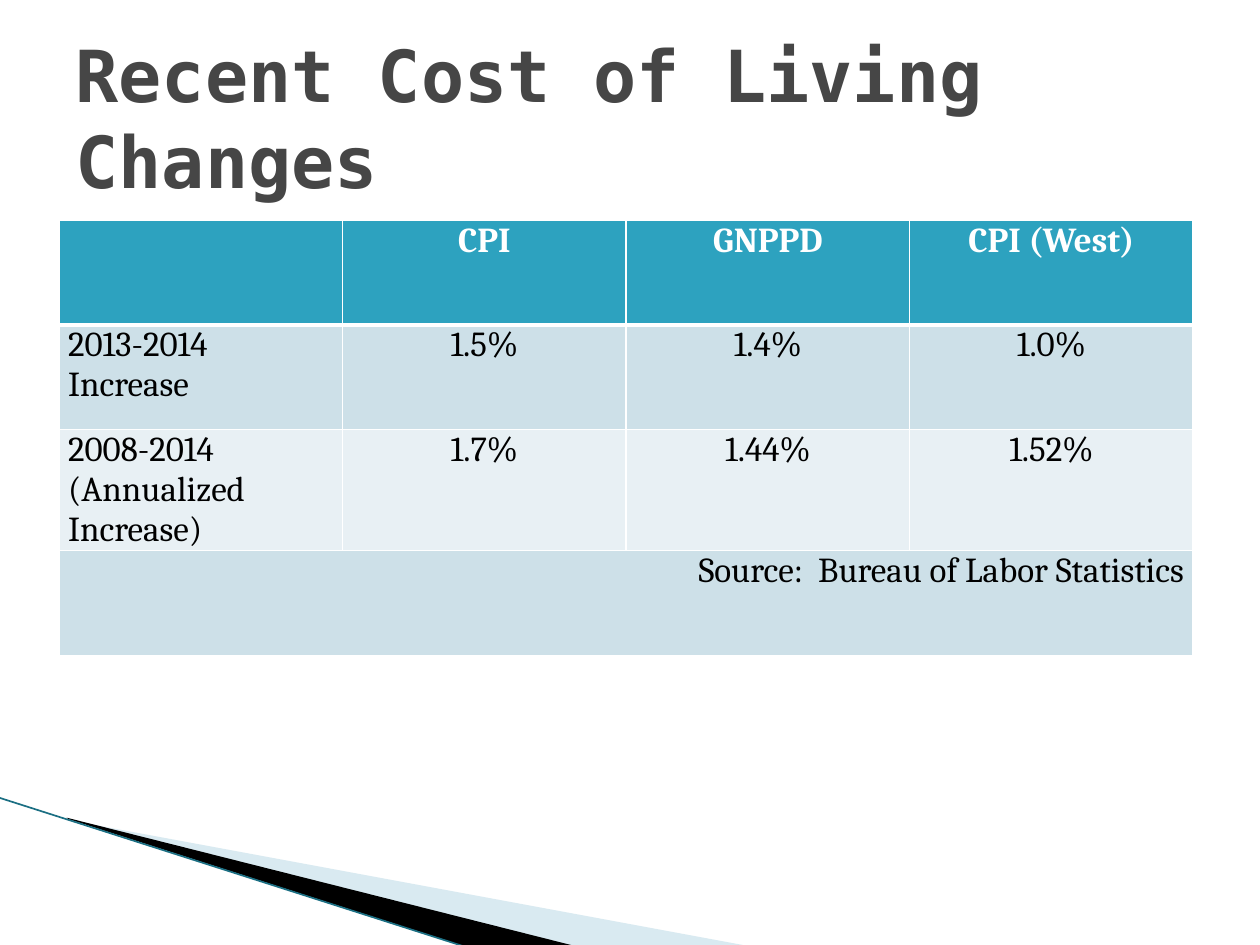
from dataclasses import dataclass

from lxml.etree import SubElement
from pptx import Presentation
from pptx.dml.color import RGBColor
from pptx.enum.shapes import MSO_CONNECTOR
from pptx.enum.text import MSO_ANCHOR, MSO_AUTO_SIZE, PP_ALIGN
from pptx.oxml.ns import qn
from pptx.util import Inches, Pt


@dataclass(frozen=True)
class Theme:
    title_font: str = "DejaVu Sans Mono"
    table_font: str = "Cambria"
    title_size: float = 41
    table_size: float = 20
    title: str = "464646"
    text: str = "000000"
    white: str = "FFFFFF"
    header: str = "2DA2BF"
    band_dark: str = "CDE0E8"
    band_light: str = "E8F0F4"
    wedge_pale: str = "A0CBDC"
    wedge_dark: str = "000000"
    edge: str = "1B6F83"


@dataclass(frozen=True)
class Wedge:
    points: tuple[tuple[float, float], ...]
    color: str
    opacity: int = 100


@dataclass(frozen=True)
class TableRow:
    texts: tuple[str, ...]
    fill: str
    color: str = Theme.text
    bold: bool = False
    bottom_border: float = 1


THEME = Theme()
WEDGES = (
    Wedge(((0.55, 6.51), (5.95, 7.51), (4.56, 7.51), (0.55, 6.5)), THEME.wedge_pale, 40),
    Wedge(((0.53, 6.49), (4.57, 7.51), (3.72, 7.52), (0.54, 6.5)), THEME.wedge_dark),
)
ROWS = (
    TableRow(("", "CPI", "GNPPD", "CPI (West)"), THEME.header, THEME.white, True, 3),
    TableRow(("2013-2014 Increase", "1.5%", "1.4%", "1.0%"), THEME.band_dark),
    TableRow(("2008-2014 (Annualized Increase)", "1.7%", "1.44%", "1.52%"), THEME.band_light),
    TableRow(("Source:  Bureau of Labor Statistics", "", "", ""), THEME.band_dark),
)


def write_text(frame, text: str, *, font: str, size: float, color: str,
               bold: bool = False, align=PP_ALIGN.LEFT) -> None:
    paragraph = frame.paragraphs[0]
    paragraph.alignment = align
    paragraph.font.size = Pt(size)
    if not text:
        return
    run = paragraph.add_run()
    run.text = text
    run.font.name = font
    run.font.size = Pt(size)
    run.font.bold = bold
    run.font.color.rgb = RGBColor.from_string(color)


def draw_wedge(slide, wedge: Wedge) -> None:
    start, *others = [(Inches(x), Inches(y)) for x, y in wedge.points]
    builder = slide.shapes.build_freeform(*start)
    builder.add_line_segments(others, close=True)
    shape = builder.convert_to_shape()
    shape.shadow.inherit = False
    shape.line.fill.background()
    shape.fill.solid()
    shape.fill.fore_color.rgb = RGBColor.from_string(wedge.color)
    if wedge.opacity < 100:
        color = shape.fill._xPr.find(qn("a:solidFill"))[0]
        SubElement(color, qn("a:alpha"), val=str(wedge.opacity * 1000))


def draw_edge(slide) -> None:
    connector = slide.shapes.add_connector(
        MSO_CONNECTOR.STRAIGHT, Inches(-0.01), Inches(6.33), Inches(3.71), Inches(7.52))
    connector.line.color.rgb = RGBColor.from_string(THEME.edge)
    connector.line.width = Pt(0.95)
    SubElement(connector._element.spPr, qn("a:effectLst"))


def set_borders(cell, widths: dict[str, float]) -> None:
    properties = cell._tc.get_or_add_tcPr()
    for side, width in widths.items():
        line = SubElement(properties, qn(f"a:ln{side}"), w=str(Pt(width)))
        fill = SubElement(line, qn("a:solidFill"))
        SubElement(fill, qn("a:srgbClr"), val=THEME.white)


def draw_table(slide, rows: tuple[TableRow, ...]) -> None:
    row_height = Inches(0.83)
    column_count = len(rows[0].texts)
    table = slide.shapes.add_table(
        len(rows), column_count, Inches(0.47), Inches(1.75),
        Inches(9), row_height * len(rows)).table
    last = len(rows) - 1
    for row_index, row in enumerate(rows):
        table.rows[row_index].height = row_height
        top = rows[row_index - 1].bottom_border if row_index else 1
        for column_index, text in enumerate(row.texts):
            cell = table.cell(row_index, column_index)
            set_borders(cell, {"L": 1, "R": 1, "T": top, "B": row.bottom_border})
            cell.fill.solid()
            cell.fill.fore_color.rgb = RGBColor.from_string(row.fill)
            cell.margin_left = cell.margin_right = Inches(0.07)
            cell.margin_top = cell.margin_bottom = 0
            if row_index == last:
                align = PP_ALIGN.RIGHT
            else:
                align = PP_ALIGN.CENTER if column_index else PP_ALIGN.LEFT
            write_text(cell.text_frame, text, font=THEME.table_font, size=THEME.table_size,
                       color=row.color, bold=row.bold, align=align)
    # The source note spans the whole last row
    table.cell(last, 0).merge(table.cell(last, column_count - 1))


def place_title(slide, text: str) -> None:
    title = slide.shapes.title
    title.left, title.top = Inches(0.5), Inches(0.3)
    title.width, title.height = Inches(9), Inches(1.25)
    frame = title.text_frame
    frame.word_wrap = True
    frame.auto_size = MSO_AUTO_SIZE.NONE
    frame.vertical_anchor = MSO_ANCHOR.MIDDLE
    write_text(frame, text, font=THEME.title_font, size=THEME.title_size,
               color=THEME.title, bold=True)


def main() -> None:
    presentation = Presentation()
    presentation.slide_width, presentation.slide_height = Inches(10), Inches(7.5)
    slide = presentation.slides.add_slide(presentation.slide_layouts[5])

    # Corner decoration
    for wedge in WEDGES:
        draw_wedge(slide, wedge)
    draw_edge(slide)

    # Content
    draw_table(slide, ROWS)
    place_title(slide, "Recent Cost of Living Changes")
    presentation.save("out.pptx")


if __name__ == "__main__":
    main()
